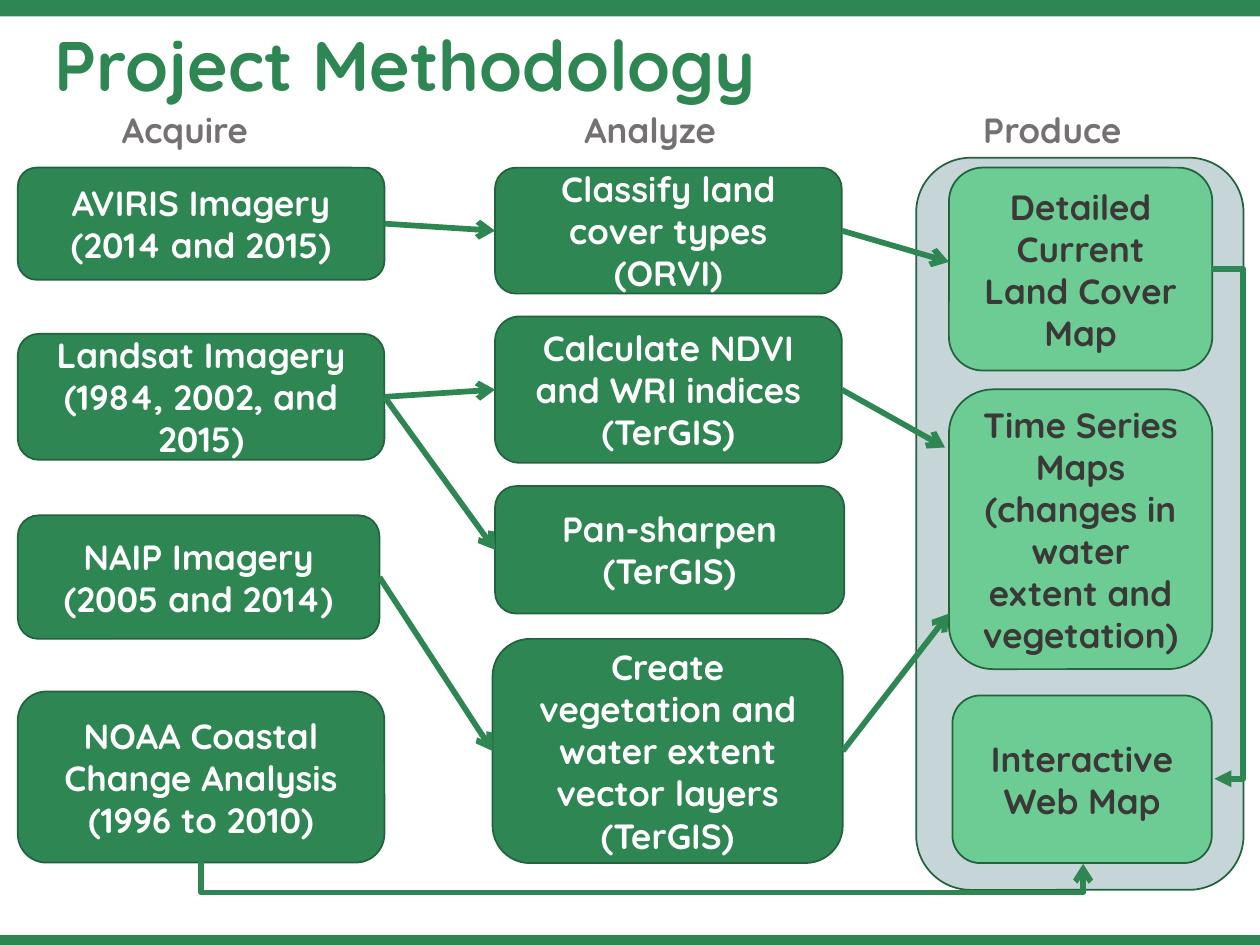
from lxml.etree import SubElement
from pptx import Presentation
from pptx.dml.color import RGBColor
from pptx.enum.shapes import MSO_CONNECTOR as Link, MSO_SHAPE as Shape
from pptx.enum.text import MSO_ANCHOR as Anchor, PP_ALIGN as Align
from pptx.oxml.ns import qn
from pptx.util import Cm, Pt

FONT = "Quicksand"
GREEN = RGBColor(0x2E, 0x86, 0x52)
MINT = RGBColor(0x6C, 0xCC, 0x93)
OUTLINE = RGBColor(0x22, 0x63, 0x3D)
TEAL = RGBColor(0x44, 0x75, 0x7B)
WHITE = RGBColor(0xFF, 0xFF, 0xFF)
DARK = RGBColor(0x3B, 0x38, 0x38)
GRAY = RGBColor(0x76, 0x71, 0x71)

ACQUIRE = {
    "aviris": ("AVIRIS Imagery (2014 and 2015)", 0.36, 3.38, 7.39, 2.26),
    "landsat": ("Landsat Imagery (1984, 2002, and 2015)", 0.36, 6.73, 7.39, 2.54),
    "naip": ("NAIP Imagery (2005 and 2014)", 0.36, 10.39, 7.29, 2.49),
    "noaa": ("NOAA Coastal Change Analysis (1996 to 2010)", 0.36, 13.94, 7.39, 3.45),
}
ANALYZE = {
    "classify": ("Classify land cover types (ORVI)", 9.98, 3.38, 6.99, 2.54),
    "indices": ("Calculate NDVI and WRI indices (TerGIS)", 9.98, 6.38, 6.99, 2.95),
    "sharpen": ("Pan-sharpen (TerGIS)", 9.98, 9.8, 7.04, 2.57),
    "vectors": ("Create vegetation and water extent vector layers (TerGIS)",
                9.93, 12.88, 7.06, 4.52),
}
PRODUCE = {
    "web": ("Interactive Web Map", 19.2, 14.02, 5.23, 3.38),
    "cover": ("Detailed Current Land Cover Map", 19.13, 3.38, 5.31, 4.09),
    "series": ("Time Series Maps\n(changes in water extent and vegetation)",
               19.13, 7.85, 5.31, 5.64),
}
STEPS = [("aviris", "classify"), ("landsat", "indices"),
         ("landsat", "sharpen"), ("naip", "vectors")]
RESULTS = [("classify", 19.13, 5.28), ("indices", 19.05, 9.02),
           ("vectors", 19.13, 12.37)]


def write_text(box, text, size=20, color=WHITE, align=Align.CENTER,
               anchor=Anchor.MIDDLE, spacing=None, tabs=()):
    """Fill a shape with one formatted paragraph per line of text."""
    frame = box.text_frame
    frame.word_wrap = True
    frame.vertical_anchor = anchor
    for number, line in enumerate(text.split("\n")):
        para = frame.add_paragraph() if number else frame.paragraphs[0]
        if tabs:
            stops = SubElement(para._p.get_or_add_pPr(), qn("a:tabLst"))
            for stop in tabs:
                SubElement(stops, qn("a:tab"), pos=str(Cm(stop)), algn="l")
        para.alignment = align
        if spacing:
            para.line_spacing = spacing
        span = para.add_run()
        span.text = line
        span.font.name = FONT
        span.font.size = Pt(size)
        span.font.bold = True
        span.font.color.rgb = color


def add_box(page, left, top, width, height, fill, kind=Shape.ROUNDED_RECTANGLE,
            outline=OUTLINE, alpha=None):
    """Draw a filled shape, optionally outlined or see-through."""
    box = page.shapes.add_shape(kind, Cm(left), Cm(top), Cm(width), Cm(height))
    box.shadow.inherit = False
    box.fill.solid()
    box.fill.fore_color.rgb = fill
    if alpha:
        color = box._element.spPr.find(".//" + qn("a:srgbClr"))
        SubElement(color, qn("a:alpha"), val=str(alpha * 1000))
    if outline:
        box.line.color.rgb = outline
        box.line.width = Pt(1)
    else:
        box.line.fill.background()
    return box


def add_label(page, left, top, width, height, text, **style):
    """Place a plain text box."""
    box = page.shapes.add_textbox(Cm(left), Cm(top), Cm(width), Cm(height))
    write_text(box, text, **style)


def add_column(page, entries, fill, color):
    """Draw the boxes of one column and return them by name."""
    boxes = {}
    for name, (text, *place) in entries.items():
        boxes[name] = add_box(page, *place, fill)
        write_text(boxes[name], text, color=color)
    return boxes


def add_arrow(page, start, end, kind=Link.STRAIGHT, head="arrow"):
    """Draw a green line with a head at its end."""
    arrow = page.shapes.add_connector(kind, *map(Cm, start + end))
    arrow.line.color.rgb = GREEN
    arrow.line.width = Pt(3.25)
    SubElement(arrow.line._get_or_add_ln(), qn("a:tailEnd"), type=head)
    SubElement(arrow._element.spPr, qn("a:effectLst"))
    return arrow


def add_elbow(page, start, end, bulge, head="arrow", turn=0):
    """Draw a bent arrow whose middle part stands off by the bulge."""
    arrow = add_arrow(page, start, end, Link.ELBOW, head)
    properties = arrow._element.spPr
    if turn:
        properties.find(qn("a:xfrm")).set("rot", str(turn * 60000))
    shape = properties.find(qn("a:prstGeom"))
    guides = shape.find(qn("a:avLst"))
    if guides is None:
        guides = SubElement(shape, qn("a:avLst"))
    share = round(100000 * bulge / abs(end[0] - start[0]))
    SubElement(guides, qn("a:gd"), name="adj1", fmla=f"val {share}")


def main():
    """Build the methodology slide."""
    deck = Presentation()
    deck.slide_width, deck.slide_height = Cm(25.4), Cm(19.05)
    page = deck.slides.add_slide(deck.slide_layouts[6])

    for top, height in ((0, 0.33), (18.85, 0.2)):
        add_box(page, 0, top, 25.4, height, GREEN, Shape.RECTANGLE, outline=None)
    add_box(page, 18.47, 3.18, 6.6, 14.76, TEAL, alpha=30)
    add_label(page, 0, 0.38, 16.33, 1.9, "Project Methodology", size=40,
              color=GREEN, anchor=Anchor.BOTTOM, spacing=0.9)
    add_label(page, 0.13, 2.06, 24.4, 1.11, "\tAcquire\tAnalyze\tProduce",
              color=GRAY, align=Align.LEFT, anchor=Anchor.TOP,
              tabs=(2.08, 11.4, 19.44))

    boxes = add_column(page, ACQUIRE, GREEN, WHITE)
    boxes.update(add_column(page, ANALYZE, GREEN, WHITE))
    add_column(page, PRODUCE, MINT, DARK)

    for source, target in STEPS:
        arrow = add_arrow(page, (0, 0), (1, 1))
        arrow.begin_connect(boxes[source], 3)
        arrow.end_connect(boxes[target], 1)
    for source, *tip in RESULTS:
        arrow = add_arrow(page, (16.97, 5), tuple(tip))
        arrow.begin_connect(boxes[source], 3)

    add_elbow(page, (12.97, 8.5), (12.92, 26.28), 0.63, turn=270)
    add_elbow(page, (24.43, 5.42), (24.48, 15.7), 0.63, head="triangle")
    deck.save("out.pptx")


if __name__ == "__main__":
    main()
